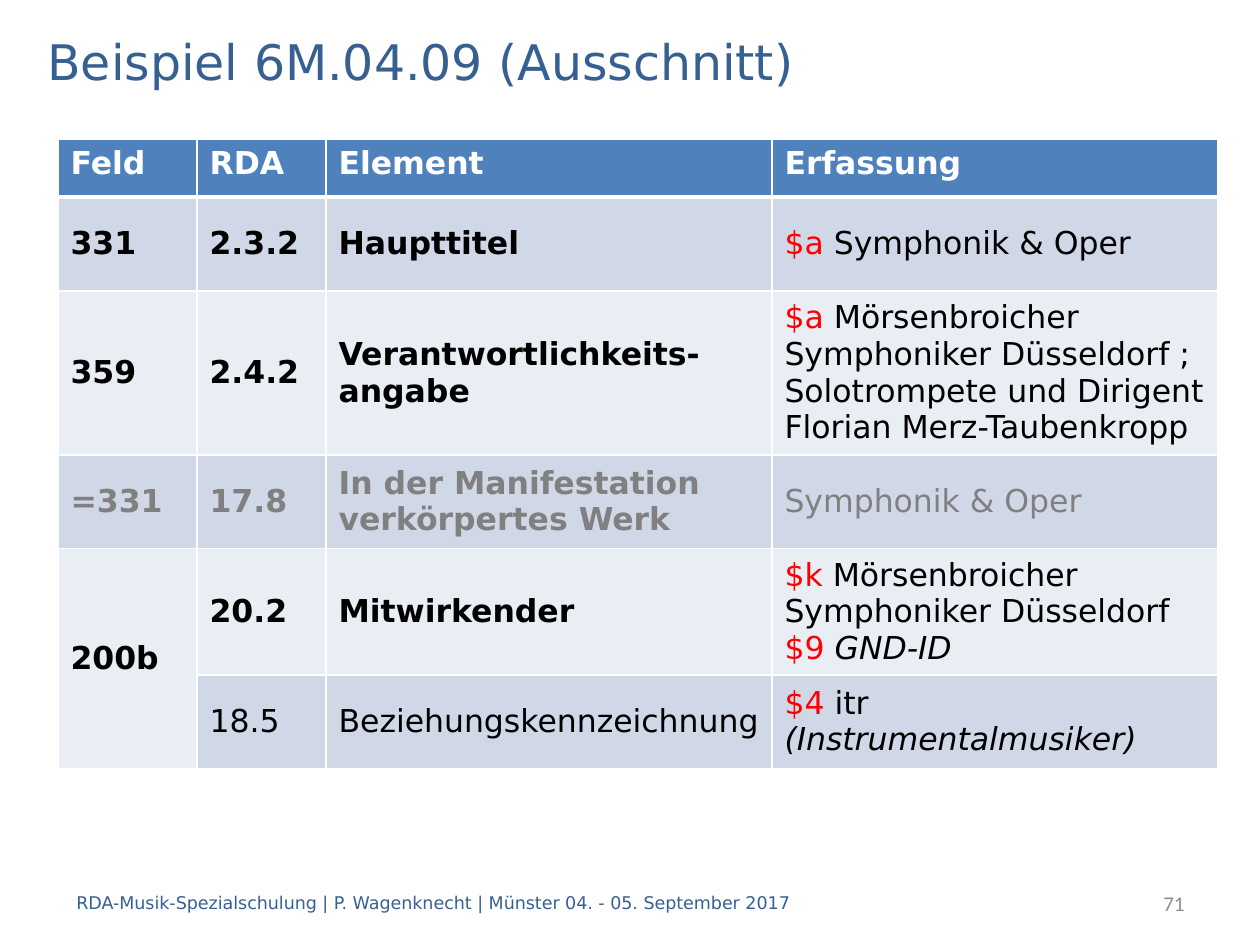
from lxml import etree
from pptx import Presentation
from pptx import util as u
from pptx.dml.color import RGBColor
from pptx.enum import text
from pptx.oxml import ns

PX = 914400 / 126  # EMU per px

WHITE = RGBColor(0xFF, 0xFF, 0xFF)
BLACK = RGBColor(0, 0, 0)
RED = RGBColor(0xFF, 0, 0)
GREY = RGBColor(0x80, 0x80, 0x80)
PAGE_GREY = RGBColor(0x8C, 0x8C, 0x8C)
NAVY = RGBColor(0x37, 0x60, 0x92)
HEADER = RGBColor(0x4F, 0x81, 0xBD)
BANDS = RGBColor(0xD0, 0xD8, 0xE8), RGBColor(0xE9, 0xED, 0xF4)


def px(length):
    return u.Emu(round(length * PX))


def add_span(para, words, size=18, font="DejaVu Sans", color=BLACK, bold=False, italic=False):
    span = para.add_run()
    span.text = words
    span.font.size = u.Pt(size)
    span.font.name = font
    span.font.color.rgb = color
    span.font.bold = bold
    span.font.italic = italic


def add_border(cell, side, points):
    properties = cell._tc.get_or_add_tcPr()
    line = etree.SubElement(properties, ns.qn(f"a:ln{side}"), w=str(u.Pt(points)))
    fill = etree.SubElement(line, ns.qn("a:solidFill"))
    etree.SubElement(fill, ns.qn("a:srgbClr"), val=str(WHITE))


class SlideBuilder:
    def __init__(self, deck):
        self.page = deck.slides.add_slide(deck.slide_layouts[6])

    def label(self, words, left, top, width, height, align=text.PP_ALIGN.LEFT, **style):
        box = self.page.shapes.add_textbox(px(left), px(top), px(width), px(height))
        frame = box.text_frame
        frame.word_wrap = True
        frame.vertical_anchor = text.MSO_ANCHOR.MIDDLE
        frame.paragraphs[0].alignment = align
        add_span(frame.paragraphs[0], words, **style)

    def table(self, left, top, columns, heights):
        frame = self.page.shapes.add_table(len(heights), len(columns), px(left), px(top),
                                           px(sum(columns)), px(sum(heights)))
        for column, width in zip(frame.table.columns, columns):
            column.width = px(width)
        for row, height in zip(frame.table.rows, heights):
            row.height = px(height)
        return frame.table

    def cell(self, cell, paragraphs, fill, spacing=0, top_line=1, bottom_line=1,
             anchor=text.MSO_ANCHOR.MIDDLE):
        for side, points in zip("LRTB", (1, 1, top_line, bottom_line)):
            add_border(cell, side, points)
        cell.fill.solid()
        cell.fill.fore_color.rgb = fill
        cell.vertical_anchor = anchor
        frame = cell.text_frame
        for number, spans in enumerate(paragraphs):
            para = frame.add_paragraph() if number else frame.paragraphs[0]
            para.space_before = para.space_after = u.Pt(spacing)
            for words, style in spans:
                add_span(para, words, **style)


def plain(words, **style):
    return [[(words, style)]]


def coded(code, *spans):
    """A paragraph that opens with a red subfield code."""
    return [(code + " ", {"color": RED}), *spans]


STRONG = {"bold": True}
FADED = {"bold": True, "color": GREY}

# Field, RDA number, element, their style, entry, paragraph spacing
ROWS = [
    ("331", "2.3.2", "Haupttitel", STRONG,
     [coded("$a", ("Symphonik & Oper", {}))], 6),
    ("359", "2.4.2", "Verantwortlichkeits-angabe", STRONG,
     [coded("$a", ("Mörsenbroicher Symphoniker Düsseldorf ; Solotrompete und Dirigent "
                   "Florian Merz-Taubenkropp", {}))], 6),
    ("=331", "17.8", "In der Manifestation verkörpertes Werk", FADED,
     plain("Symphonik & Oper", color=GREY), 6),
    ("200b", "20.2", "Mitwirkender", STRONG,
     [coded("$k", ("Mörsenbroicher Symphoniker Düsseldorf", {})),
      coded("$9", ("GND-ID", {"italic": True}))], 0),
    ("", "18.5", "Beziehungskennzeichnung", {},
     [coded("$4", ("itr ", {}), ("(Instrumentalmusiker)", {"italic": True}))], 0),
]


def main():
    deck = Presentation()
    deck.slide_width, deck.slide_height = px(1260), px(945)
    slide = SlideBuilder(deck)

    # Title
    slide.label("Beispiel 6M.04.09 (Ausschnitt)", 35, 25, 1191, 71, size=28, color=NAVY)

    # Table header
    table = slide.table(58, 139, [139, 129, 446, 446], [58] + [94] * len(ROWS))
    for column, words in enumerate(("Feld", "RDA", "Element", "Erfassung")):
        slide.cell(table.cell(0, column), plain(words, color=WHITE, bold=True), HEADER,
                   bottom_line=3, anchor=text.MSO_ANCHOR.TOP)

    # Table body; the last field spans two rows
    table.cell(4, 0).merge(table.cell(5, 0))
    for row, (field, number, element, style, entry, spacing) in enumerate(ROWS, 1):
        fill = BANDS[(row - 1) % 2]
        top_line = 3 if row == 1 else 1
        for column, words in enumerate((field, number, element)):
            if words:
                slide.cell(table.cell(row, column), plain(words, **style), fill, 6, top_line)
        slide.cell(table.cell(row, 3), entry, fill, spacing, top_line)

    # Footer
    slide.label("RDA-Musik-Spezialschulung | P. Wagenknecht | Münster 04. - 05. September 2017",
                64, 878, 843, 50, size=10, color=NAVY)
    slide.label("71", 997, 878, 200, 50, align=text.PP_ALIGN.RIGHT,
                size=12, font="Calibri", color=PAGE_GREY)

    deck.save("out.pptx")


if __name__ == "__main__":
    main()
